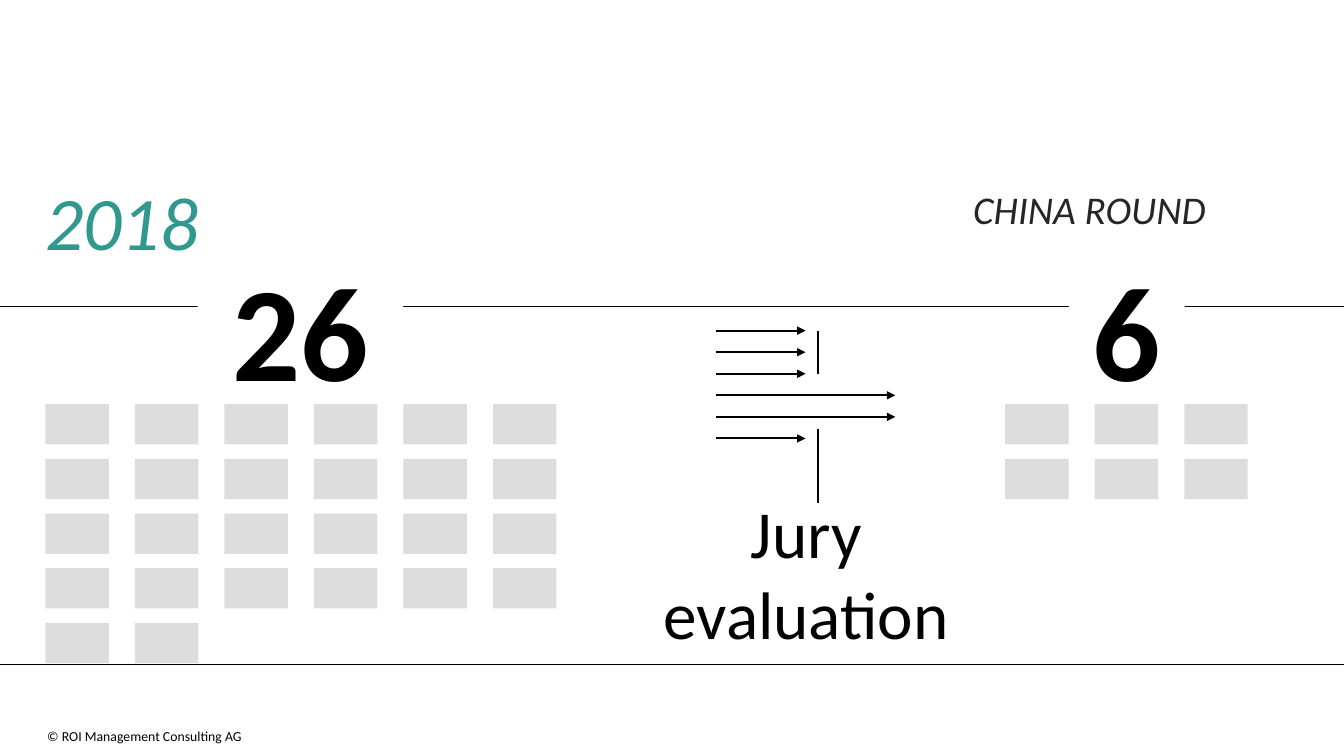
from pptx import Presentation
from pptx.dml.color import RGBColor
from pptx.enum.shapes import MSO_CONNECTOR, MSO_SHAPE
from pptx.enum.text import MSO_ANCHOR, PP_ALIGN
from pptx.oxml.ns import qn
from pptx.util import Inches, Pt
from lxml import etree

STRAIGHT, RECT = MSO_CONNECTOR.STRAIGHT, MSO_SHAPE.RECTANGLE
LEFT, CENTER = PP_ALIGN.LEFT, PP_ALIGN.CENTER
MIDDLE, TOP = MSO_ANCHOR.MIDDLE, MSO_ANCHOR.TOP
COLORS = {"black": "000000", "dark": "262626", "teal": "30988E",
          "tile": "DDDDDD", "white": "FFFFFF"}
W, H = 13.33, 7.5


def write(sp, text, size, color="black", align=CENTER, anchor=MIDDLE,
          inset=(0.1, 0), bold=False, italic=False):
    """Fill a shape with one formatted paragraph; inset is (sides, top and bottom)."""
    tf = sp.text_frame
    tf.word_wrap = True
    tf.vertical_anchor = anchor
    tf.margin_left = tf.margin_right = Inches(inset[0])
    tf.margin_top = tf.margin_bottom = Inches(inset[1])
    tf.text = text
    p = tf.paragraphs[0]
    p.alignment = align
    font = p.runs[0].font
    font.name, font.size, font.bold, font.italic = "Calibri", Pt(size), bold, italic
    font.color.rgb = RGBColor.from_string(COLORS[color])
    return p


def add_line(x1, y1, x2, y2, width, arrow=False):
    line = s.shapes.add_connector(STRAIGHT, Inches(x1), Inches(y1), Inches(x2), Inches(y2))
    line.line.color.rgb = RGBColor.from_string(COLORS["black"])
    line.line.width = Pt(width)
    if arrow:
        etree.SubElement(line.line._get_or_add_ln(), qn("a:tailEnd"), type="triangle")
    etree.SubElement(line._element.spPr, qn("a:effectLst"))


prs = Presentation()
prs.slide_width, prs.slide_height = Inches(W), Inches(H)
s = prs.slides.add_slide(prs.slide_layouts[5])

# Title and captions
title = s.shapes.title
title.left, title.top = Inches(0.45), Inches(1.46)
title.width, title.height = Inches(12.44), Inches(1.57)
p = write(title, "2018", 54, "teal", align=LEFT, inset=(0, 0), italic=True)
p.line_spacing = 0.9

footer = s.shapes.add_textbox(Inches(0.37), Inches(7.17), Inches(6.99), Inches(0.27))
write(footer, "© ROI Management Consulting AG", 9.8, align=LEFT, anchor=TOP, inset=(0.1, 0.05))
region = s.shapes.add_textbox(Inches(9.5), Inches(1.84), Inches(2.61), Inches(0.47))
write(region, "CHINA ROUND", 28, "dark", inset=(0, 0), italic=True)

# Horizontal rules
for y in (3.04, 6.59):
    add_line(0, y, W, y, 0.75)

# Entry counts, each with one tile per entry
TILE_W, TILE_H, TILE_TOP = 0.63, 0.4, 4.01
PITCH_X, PITCH_Y = 4.44 / 5, 2.17 / 4
for count, columns, left, number_left, number_w in (
        (26, 6, 0.45, 1.96, 2.04), (6, 3, 9.97, 10.6, 1.15)):
    boxes = [(left + i % columns * PITCH_X, TILE_TOP + i // columns * PITCH_Y,
              TILE_W, TILE_H, "tile") for i in range(count)]
    boxes.append((number_left, 2.49, number_w, 1.52, "white"))
    for x, y, w, h, color in boxes:
        sp = s.shapes.add_shape(RECT, Inches(x), Inches(y), Inches(w), Inches(h))
        sp.shadow.inherit = False
        sp.fill.solid()
        sp.fill.fore_color.rgb = RGBColor.from_string(COLORS[color])
        sp.line.fill.background()
    write(sp, str(count), 96, bold=True)

# Jury filter: two arrows pass through the gap in the barrier
STOP, PASS = 7.99, 8.88
for i, end in enumerate((STOP, STOP, STOP, PASS, PASS, STOP)):
    y = 3.28 + i * 1.07 / 5
    add_line(7.1, y, end, y, 1.5, arrow=True)
for y1, y2 in ((3.28, 3.71), (4.26, 4.99)):
    add_line(8.11, y1, 8.11, y2, 1.5)
jury = s.shapes.add_textbox(Inches(6.04), Inches(4.67), Inches(3.91), Inches(2.01))
write(jury, "Jury evaluation", 48)

prs.save("out.pptx")
